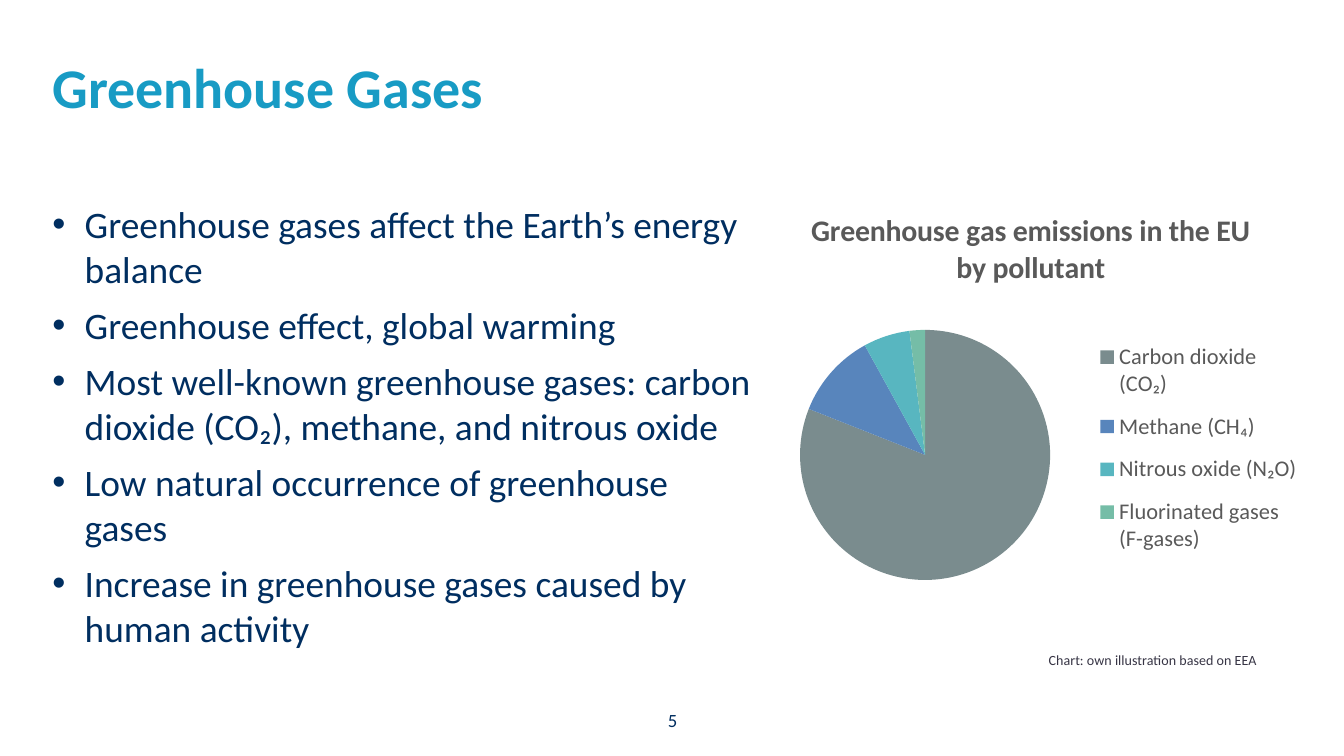
from lxml import etree
from pptx import Presentation
from pptx.chart.data import CategoryChartData
from pptx.dml.color import RGBColor
from pptx.enum.chart import XL_CHART_TYPE as CT, XL_LEGEND_POSITION as LP
from pptx.enum.text import MSO_ANCHOR as MA, PP_ALIGN as PA
from pptx.oxml.ns import qn
from pptx.util import Inches, Pt

W = 10
H = W * 9 / 16
FONT = "Calibri"
NAVY, CYAN, GREY, DARK = "002E60", "189BC4", "595959", "373545"

BULLETS = [
    "Greenhouse gases affect the Earth’s energy balance",
    "Greenhouse effect, global warming",
    "Most well-known greenhouse gases: carbon dioxide (CO₂), methane, and nitrous oxide",
    "Low natural occurrence of greenhouse gases",
    "Increase in greenhouse gases caused by human activity",
]
GASES = [  # name, share in percent, slice colour
    ("Carbon dioxide (CO₂)", 81, "7A8C8E"),
    ("Methane (CH₄)", 11, "5885BC"),
    ("Nitrous oxide (N₂O)", 6, "58B6C0"),
    ("Fluorinated gases (F-gases)", 2, "75BDA7"),
]


def rgb(color):
    return RGBColor.from_string(color)


def share_box(left, top, width, height):
    """Turn percentages of the slide's size into lengths."""
    return [Inches(share * side / 100) for share, side in
            ((left, W), (top, H), (width, W), (height, H))]


def style(font, size, color, bold=False):
    font.name, font.size, font.bold = FONT, Pt(size), bold
    font.color.rgb = rgb(color)


def add_text(slide, box, lines, size, color, bold=False, align=PA.LEFT,
             anchor=MA.TOP, inset=(0, 0)):
    tf = slide.shapes.add_textbox(*box).text_frame
    tf.word_wrap, tf.vertical_anchor = True, anchor
    tf.margin_left = tf.margin_right = Inches(inset[0])
    tf.margin_top = tf.margin_bottom = Inches(inset[1])
    tf.text = "\n".join(lines)
    for p in tf.paragraphs:
        p.alignment = align
        for r in p.runs:
            style(r.font, size, color, bold)
    return tf


def add_bullets(slide, box):
    tf = add_text(slide, box, BULLETS, 20, NAVY)
    for i, p in enumerate(tf.paragraphs):
        if i:
            p.space_before = Pt(6)
        pPr = p._p.get_or_add_pPr()
        pPr.set("marL", str(Inches(0.24)))
        pPr.set("indent", str(-Inches(0.24)))
        etree.SubElement(pPr, qn("a:buFont")).set("typeface", "Arial")
        etree.SubElement(pPr, qn("a:buChar")).set("char", "•")


def set_layout(parent, index, inner=False, **shares):
    """Place a chart part by shares of the chart's size."""
    for old in parent.findall(qn("c:layout")):
        parent.remove(old)
    layout = etree.Element(qn("c:layout"))
    manual = etree.SubElement(layout, qn("c:manualLayout"))
    values = {"layoutTarget": "inner"} if inner else {}
    values.update(xMode="edge", yMode="edge", **shares)
    for tag, value in values.items():
        etree.SubElement(manual, qn("c:" + tag)).set("val", str(value))
    parent.insert(index, layout)


def add_pie(slide, box):
    data = CategoryChartData()
    data.categories = [name for name, _, _ in GASES]
    data.add_series("Series 1", [share for _, share, _ in GASES])
    chart = slide.shapes.add_chart(CT.PIE, *box, data).chart
    style(chart.font, 10, "000000")

    # Title
    title = chart.chart_title
    title.text_frame.text = "Greenhouse gas emissions in the EU by pollutant"
    style(title.text_frame.paragraphs[0].runs[0].font, 16, GREY, True)
    set_layout(title._element, 1, x=0.11, y=0.03)

    # Legend
    chart.has_legend = True
    legend = chart.legend
    legend.position, legend.include_in_layout = LP.RIGHT, False
    style(legend.font, 12, GREY)
    set_layout(legend._element, 1, x=0.63, y=0.29, w=0.35, h=0.51)

    # Slices
    plot = chart.plots[0]
    plot.vary_by_categories = True
    for i, (_, _, color) in enumerate(GASES):
        fill = plot.series[0].points[i].format.fill
        fill.solid()
        fill.fore_color.rgb = rgb(color)
    set_layout(chart._chartSpace.chart.plotArea, 0, inner=True,
               x=0.1, y=0.26, w=0.44, h=0.6)


def build_slide(prs):
    slide = prs.slides.add_slide(prs.slide_layouts[6])
    # Heading and bullet list
    add_text(slide, share_box(3.9, 7, 82.7, 18.1),
             ["Greenhouse Gases"], 30, CYAN, bold=True)
    add_bullets(slide, share_box(3.9, 26.67, 52.2, 64.4))
    # Page number
    add_text(slide, share_box(46.1, 92.5, 7.9, 5.5),
             ["5"], 10, NAVY, align=PA.CENTER, anchor=MA.MIDDLE)
    # Chart and its credit
    add_pie(slide, share_box(55.3, 25.25, 42.3, 62.4))
    add_text(slide, share_box(68.9, 84.6, 25.3, 5.3),
             ["Chart: own illustration based on EEA"], 7.5, DARK,
             align=PA.RIGHT, anchor=MA.MIDDLE, inset=(0.07, 0.04))


def main():
    prs = Presentation()
    prs.slide_width, prs.slide_height = Inches(W), Inches(H)
    build_slide(prs)
    prs.save("out.pptx")


if __name__ == "__main__":
    main()
